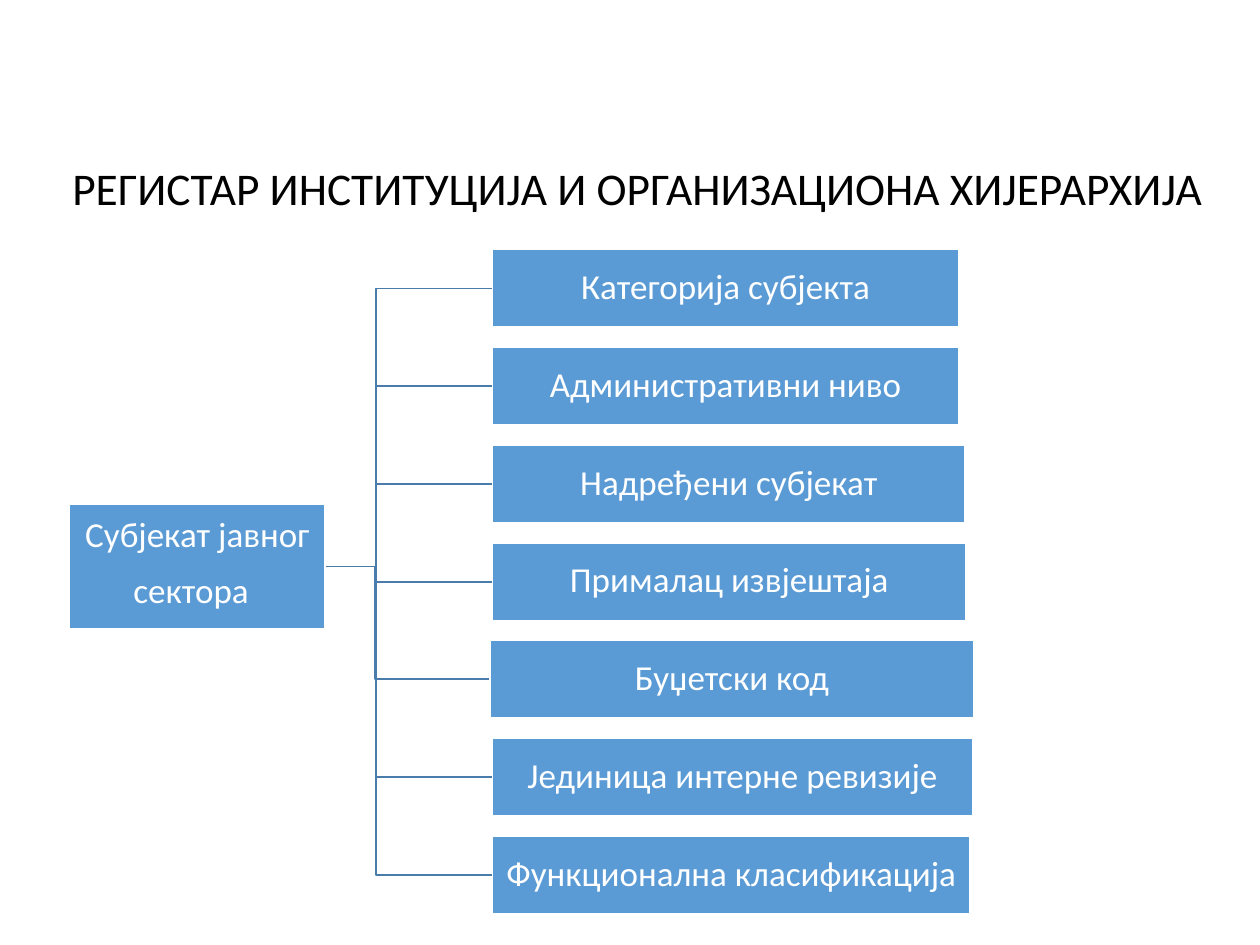
import dataclasses

import pptx
import pptx.dml.color
import pptx.enum.shapes
import pptx.enum.text
import pptx.util

Cm = pptx.util.Cm
Pt = pptx.util.Pt


@dataclasses.dataclass
class Theme:
    font: str = "Calibri"
    ink: str = "000000"
    light: str = "FFFFFF"
    fill: str = "5B9BD5"
    branch: str = "497CAB"
    head_size: float = 25.9
    box_size: float = 20
    gap_size: float = 32
    line: float = 1


class Chart:
    """Holds the theme and the slide that the methods draw on."""

    def __init__(self, slide, theme):
        self.slide = slide
        self.theme = theme

    def color(self, code):
        return pptx.dml.color.RGBColor.from_string(code)

    def label(self, frame, runs, code):
        """Fill a frame with one centred paragraph of (text, size) runs."""
        frame.word_wrap = True
        frame.auto_size = pptx.enum.text.MSO_AUTO_SIZE.NONE
        frame.vertical_anchor = pptx.enum.text.MSO_ANCHOR.MIDDLE
        para = frame.paragraphs[0]
        para.alignment = pptx.enum.text.PP_ALIGN.CENTER
        for text, size in runs:
            run = para.add_run()
            run.text = text
            run.font.name = self.theme.font
            run.font.size = Pt(size)
            run.font.color.rgb = self.color(code)
        return para

    def title(self, text, left, top, width, height):
        head = self.slide.shapes.title
        head.left, head.top = Cm(left), Cm(top)
        head.width, head.height = Cm(width), Cm(height)
        para = self.label(head.text_frame, [(text, self.theme.head_size)], self.theme.ink)
        para.space_before = Pt(0)
        para.space_after = Pt(6)

    def branch(self, start, end):
        """Draw a line that turns halfway across from start to end."""
        (x1, y1), (x2, y2) = start, end
        mid = (x1 + x2) / 2
        build = self.slide.shapes.build_freeform(Cm(x1), Cm(y1))
        points = [(mid, y1), (mid, y2), (x2, y2)]
        build.add_line_segments([(Cm(x), Cm(y)) for x, y in points], close=False)
        shape = build.convert_to_shape()
        shape.shadow.inherit = False
        shape.fill.background()
        shape.line.color.rgb = self.color(self.theme.branch)
        shape.line.width = Pt(self.theme.line)

    def box(self, runs, left, top, width, height):
        kind = pptx.enum.shapes.MSO_SHAPE.RECTANGLE
        shape = self.slide.shapes.add_shape(kind, Cm(left), Cm(top), Cm(width), Cm(height))
        shape.shadow.inherit = False
        shape.fill.solid()
        shape.fill.fore_color.rgb = self.color(self.theme.fill)
        shape.line.color.rgb = self.color(self.theme.light)
        shape.line.width = Pt(self.theme.line)
        frame = shape.text_frame
        frame.margin_left = frame.margin_right = Cm(0.03)
        frame.margin_top = frame.margin_bottom = Cm(0.03)
        self.label(frame, runs, self.theme.light).line_spacing = 0.9


LEAVES = [
    ("Категорија субјекта", 9.93, 9.4),
    ("Административни ниво", 9.93, 9.4),
    ("Надређени субјекат", 9.93, 9.53),
    ("Прималац извјештаја", 9.93, 9.55),
    ("Буџетски код", 9.88, 9.75),
    ("Јединица интерне ревизије", 9.93, 9.68),
    ("Функционална класификација", 9.93, 9.63),
]
FIRST, STEP, TALL = 5.03, 1.97, 1.57
ROOT = (1.4, 10.16, 5.16, 2.51)
START = (5.23, 11.42)


def main():
    deck = pptx.Presentation()
    deck.slide_width, deck.slide_height = Cm(25.4), Cm(19.05)
    theme = Theme()
    chart = Chart(deck.slides.add_slide(deck.slide_layouts[5]), theme)
    chart.title("РЕГИСТАР ИНСТИТУЦИЈА И ОРГАНИЗАЦИОНА ХИЈЕРАРХИЈА",
                0.97, 2.64, 23.77, 2.29)

    tops = [FIRST + STEP * row for row in range(len(LEAVES))]
    for (_, left, _), top in zip(LEAVES, tops):
        chart.branch(START, (left, top + TALL / 2))
    chart.box([("Субјекат јавног сектора", theme.box_size), (" ", theme.gap_size)], *ROOT)
    for (text, left, width), top in zip(LEAVES, tops):
        chart.box([(text, theme.box_size)], left, top, width, TALL)

    deck.save("out.pptx")


if __name__ == "__main__":
    main()
